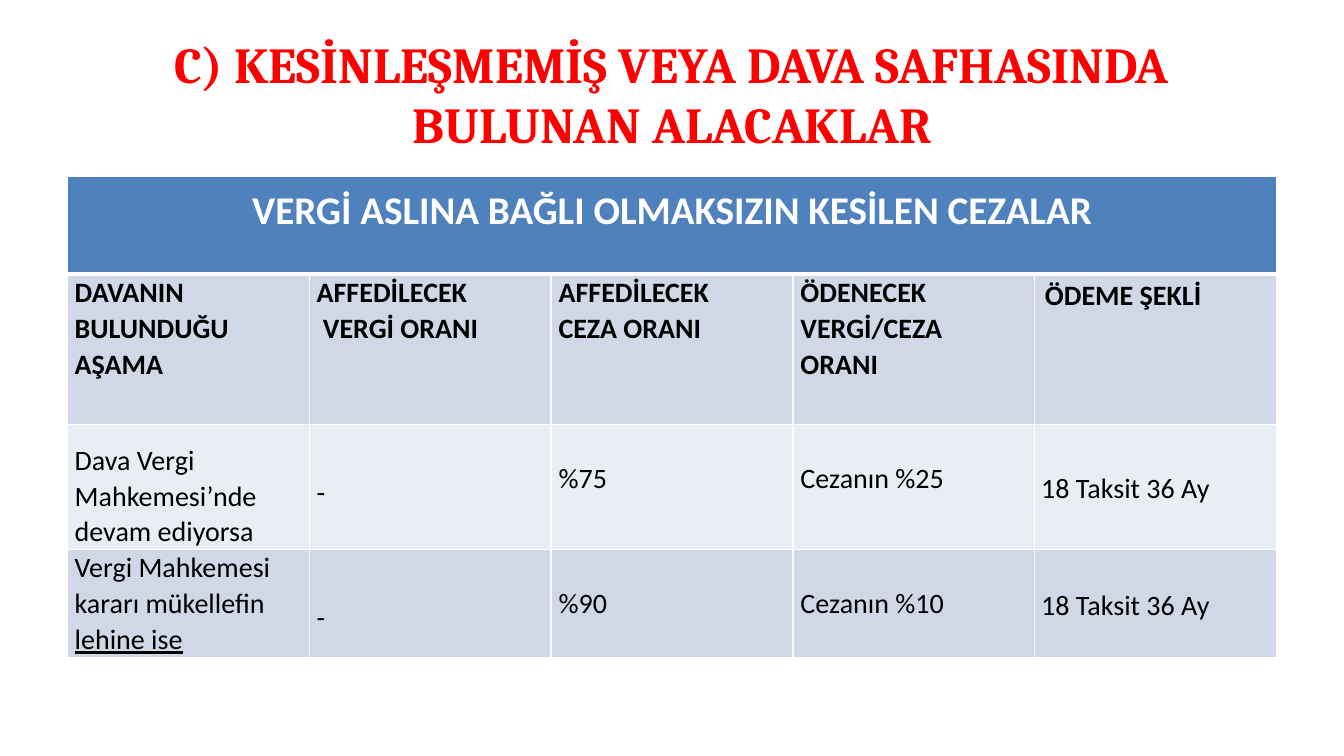
from dataclasses import dataclass

from lxml.etree import SubElement
from pptx import Presentation
from pptx.dml.color import RGBColor
from pptx.enum.text import MSO_ANCHOR, PP_ALIGN
from pptx.oxml.ns import qn
from pptx.util import Pt


@dataclass(frozen=True)
class Theme:
    title_color: str = "FF0000"
    banner: str = "4F81BD"
    dark_band: str = "D0D8E8"
    light_band: str = "E9EDF4"
    white: str = "FFFFFF"
    black: str = "000000"
    title_font: str = "Cambria"
    body_font: str = "Calibri"
    title_size: float = 36
    banner_size: float = 28
    body_size: float = 20
    half_line: float = 12.8


class SlideBuilder:
    def __init__(self, prs, theme):
        self.theme = theme
        self.slide = prs.slides.add_slide(prs.slide_layouts[5])

    def font(self, r, name, size, color, bold=False):
        r.font.name = name
        r.font.size = Pt(size)
        r.font.bold = bold
        r.font.color.rgb = RGBColor.from_string(color)

    def title(self, text, left, top, width, height):
        sp = self.slide.shapes.title
        sp.left, sp.top, sp.width, sp.height = map(Pt, (left, top, width, height))
        tf = sp.text_frame
        tf.text = text
        tf.vertical_anchor = MSO_ANCHOR.MIDDLE
        p = tf.paragraphs[0]
        p.alignment = PP_ALIGN.CENTER
        t = self.theme
        self.font(p.runs[0], t.title_font, t.title_size, t.title_color, True)

    def table(self, left, top, width, row_heights, columns):
        frame = self.slide.shapes.add_table(
            len(row_heights), columns, Pt(left), Pt(top), Pt(width), Pt(sum(row_heights)))
        table = frame.table
        for row, height in zip(table.rows, row_heights):
            row.height = Pt(height)
        return table

    def paint(self, cell, fill, top=1, bottom=1):
        cell.fill.solid()
        cell.fill.fore_color.rgb = RGBColor.from_string(fill)
        tc_pr = cell._tc.get_or_add_tcPr()
        sides = (("a:lnL", 1), ("a:lnR", 1), ("a:lnT", top), ("a:lnB", bottom))
        for i, (tag, width) in enumerate(sides):
            ln = SubElement(tc_pr, qn(tag), w=str(Pt(width)))
            solid = SubElement(ln, qn("a:solidFill"))
            SubElement(solid, qn("a:srgbClr"), val=self.theme.white)
            tc_pr.insert(i, ln)

    def cell_text(self, cell, text, spacing, align=PP_ALIGN.JUSTIFY, margins=(5.4, 0),
                  size=None, color=None, bold=False):
        t = self.theme
        side, cell.margin_top = map(Pt, margins)
        cell.margin_left = cell.margin_right = side
        cell.margin_bottom = 0
        cell.text_frame.text = text
        for p in cell.text_frame.paragraphs:
            p.alignment = align
            p.line_spacing = spacing
            for r in p.runs:
                self.font(r, t.body_font, size or t.body_size, color or t.black, bold)


def main():
    theme = Theme()
    prs = Presentation()
    prs.slide_width, prs.slide_height = Pt(960), Pt(540)
    s = SlideBuilder(prs, theme)
    s.title("C) KESİNLEŞMEMİŞ VEYA DAVA SAFHASINDA BULUNAN ALACAKLAR", 48, 21.6, 864, 90)

    half = theme.half_line
    line = Pt(2 * half)
    table = s.table(48, 126, 864, (69.8, 107.2, 7 * half, 6 * half), 5)
    bands = (theme.banner, theme.dark_band, theme.light_band, theme.dark_band)
    for i, (fill, row) in enumerate(zip(bands, table.rows)):
        for cell in row.cells:
            s.paint(cell, fill, 3 if i == 1 else 1, 3 if i == 0 else 1)

    banner = table.cell(0, 0)
    banner.merge(table.cell(0, 4))
    s.cell_text(banner, "VERGİ ASLINA BAĞLI OLMAKSIZIN KESİLEN CEZALAR", line, PP_ALIGN.CENTER,
                (7.2, 3.6 + half), theme.banner_size, theme.white, True)

    headings = ("DAVANIN\nBULUNDUĞU\nAŞAMA", "AFFEDİLECEK\n VERGİ ORANI",
                "AFFEDİLECEK\nCEZA ORANI", "ÖDENECEK\nVERGİ/CEZA\nORANI")
    for col, text in enumerate(headings):
        s.cell_text(table.cell(1, col), text, line, bold=True)
    s.cell_text(table.cell(1, 4), "ÖDEME ŞEKLİ", 1.0, PP_ALIGN.LEFT, (7.2, 3.6), bold=True)

    stages = (
        ("Dava Vergi\nMahkemesi’nde\ndevam ediyorsa", half, "%75", "Cezanın %25"),
        ("Vergi Mahkemesi\nkararı mükellefin\nlehine ise", 0, "%90", "Cezanın %10"),
    )
    for row, (stage, offset, waived, payable) in enumerate(stages, 2):
        s.cell_text(table.cell(row, 0), stage, line, margins=(5.4, offset))
        s.cell_text(table.cell(row, 1), "-", 2.5)
        for col, text in ((2, waived), (3, payable)):
            s.cell_text(table.cell(row, col), text, line, margins=(5.4, 2 * half))
        payment = table.cell(row, 4)
        s.cell_text(payment, " 18 Taksit 36 Ay", 1.15, PP_ALIGN.LEFT, (0, 0))
        payment.vertical_anchor = MSO_ANCHOR.MIDDLE
    table.cell(3, 0).text_frame.paragraphs[2].runs[0].font.underline = True

    prs.save("out.pptx")


if __name__ == "__main__":
    main()
